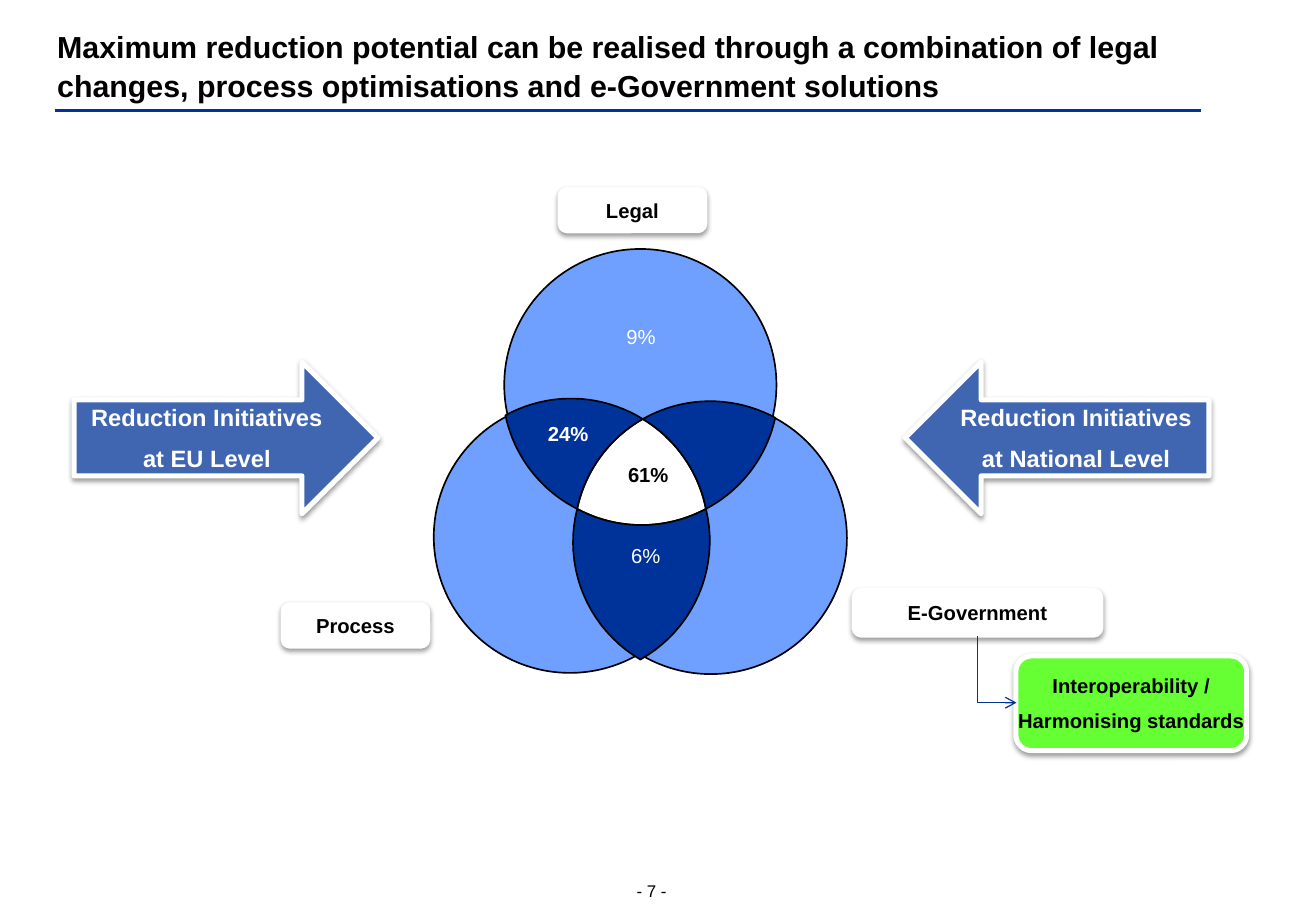
"""Build a slide showing the reduction potential of legal, process and e-Government measures."""
import math

import pptx
import pptx.dml.color
import pptx.enum.shapes
import pptx.enum.text
import pptx.oxml
import pptx.oxml.ns
import pptx.util

Inches = pptx.util.Inches
Pt = pptx.util.Pt
RGBColor = pptx.dml.color.RGBColor
Preset = pptx.enum.shapes.MSO_SHAPE
Connector = pptx.enum.shapes.MSO_CONNECTOR
Anchor = pptx.enum.text.MSO_ANCHOR
Align = pptx.enum.text.PP_ALIGN

BLACK = RGBColor(0x00, 0x00, 0x00)
WHITE = RGBColor(0xFF, 0xFF, 0xFF)
NAVY = RGBColor(0x00, 0x33, 0x99)
LINK_BLUE = RGBColor(0x00, 0x32, 0x96)
ARROW_BLUE = RGBColor(0x40, 0x66, 0xB2)
CIRCLE_BLUE = RGBColor(0x70, 0xA0, 0xFF)
GREEN = RGBColor(0x66, 0xFF, 0x33)

TITLE = ("Maximum reduction potential can be realised through a combination of legal "
         "changes, process optimisations and e-Government solutions")
PAGE_NUMBER = "- 7 -"

CARDS = [
    (["E-Government"], Preset.ROUNDED_RECTANGLE, (7.03, 4.86, 2.03, 0.37), WHITE, BLACK, 12),
    (["Legal"], Preset.ROUNDED_RECTANGLE, (4.61, 1.56, 1.19, 0.34), WHITE, BLACK, 12),
    (["Process"], Preset.ROUNDED_RECTANGLE, (2.33, 4.98, 1.19, 0.34), WHITE, BLACK, 12),
    (["Reduction Initiatives", "at EU Level"], Preset.RIGHT_ARROW,
     (0.61, 2.98, 2.5, 1.25), ARROW_BLUE, WHITE, 14),
    (["Reduction Initiatives", "at National Level"], Preset.LEFT_ARROW,
     (7.45, 2.98, 2.5, 1.25), ARROW_BLUE, WHITE, 14),
    (["Interoperability /", "Harmonising standards"], Preset.ROUNDED_RECTANGLE,
     (8.36, 5.4, 1.9, 0.78), GREEN, BLACK, 12),
]

RADIUS = 1.12
CIRCLE_CENTRES = [(5.27, 3.17), (4.69, 4.42), (5.85, 4.43)]
APEX, CORE_LEFT, CORE_RIGHT = (5.29, 3.45), (4.75, 4.19), (5.81, 4.19)
TIP_LEFT, TIP_RIGHT, TIP_BOTTOM = (4.16, 3.42), (6.38, 3.44), (5.27, 5.43)
CORE = [APEX, CORE_RIGHT, CORE_LEFT]
OVERLAPS = [
    (CORE, WHITE),
    ([TIP_LEFT, APEX, CORE_LEFT], NAVY),
    ([APEX, TIP_RIGHT, CORE_RIGHT], NAVY),
    ([CORE_LEFT, CORE_RIGHT, TIP_BOTTOM], NAVY),
]
ARC_STEPS = 20

SHARES = [
    ("9%", (4.99, 2.62, 0.57, 0.4), WHITE, False),
    ("24%", (4.32, 3.42, 0.71, 0.4), WHITE, True),
    ("61%", (4.98, 3.76, 0.71, 0.4), BLACK, True),
    ("6%", (5.03, 4.42, 0.57, 0.4), WHITE, False),
]


def apply(target, settings):
    for name, value in settings.items():
        setattr(target, name, value)


def write(shape, lines, size, color, bold=False, align=Align.CENTER, inset=None,
          anchor=Anchor.TOP, wrap=False, spacing=None):
    frame = shape.text_frame
    apply(frame, {"word_wrap": wrap, "vertical_anchor": anchor})
    if inset is not None:
        sides = ("margin_left", "margin_top", "margin_right", "margin_bottom")
        apply(frame, {side: Inches(inset) for side in sides})
    for index, line in enumerate(lines):
        para = frame.add_paragraph() if index else frame.paragraphs[0]
        para.alignment = align
        if index:
            para.space_before = Pt(size * 0.53)
        if spacing:
            para.line_spacing = spacing
        span = para.add_run()
        span.text = line
        apply(span.font, {"name": "Arial", "size": Pt(size), "bold": bold})
        span.font.color.rgb = color


def paint(shape, fill, line, width):
    shape.shadow.inherit = False
    shape.fill.solid()
    shape.fill.fore_color.rgb = fill
    shape.line.color.rgb = line
    shape.line.width = Pt(width)


def add_shadow(shape):
    effects = shape.element.spPr.find(pptx.oxml.ns.qn("a:effectLst"))
    effects.append(pptx.oxml.parse_xml(
        f'<a:outerShdw {pptx.oxml.ns.nsdecls("a")} blurRad="{Pt(3.1)}" dist="{Pt(1.6)}" '
        'dir="5400000" rotWithShape="0"><a:srgbClr val="000000">'
        '<a:alpha val="38000"/></a:srgbClr></a:outerShdw>'))


def add_line(page, kind, ends, color, width):
    line = page.shapes.add_connector(kind, *map(Inches, ends))
    line.line.color.rgb = color
    line.line.width = Pt(width)
    line.element.spPr.append(
        pptx.oxml.parse_xml(f'<a:effectLst {pptx.oxml.ns.nsdecls("a")}/>'))
    return line


def arc(start, end, side):
    run, rise = end[0] - start[0], end[1] - start[1]
    chord = math.hypot(run, rise)
    depth = side * math.sqrt(RADIUS ** 2 - chord ** 2 / 4) / chord
    center_x = (start[0] + end[0]) / 2 - rise * depth
    center_y = (start[1] + end[1]) / 2 + run * depth
    first = math.atan2(start[1] - center_y, start[0] - center_x)
    sweep = side * 2 * math.asin(chord / 2 / RADIUS)
    angles = [first + sweep * step / ARC_STEPS for step in range(ARC_STEPS + 1)]
    return [(Inches(center_x + RADIUS * math.cos(angle)),
             Inches(center_y + RADIUS * math.sin(angle))) for angle in angles]


def edges(corners):
    return list(zip(corners, corners[1:] + corners[:1]))


def add_venn(page):
    for x, y in CIRCLE_CENTRES:
        bounds = (x - RADIUS, y - RADIUS, 2 * RADIUS, 2 * RADIUS)
        circle = page.shapes.add_shape(Preset.OVAL, *map(Inches, bounds))
        paint(circle, CIRCLE_BLUE, BLACK, 1)
    for corners, fill in OVERLAPS:
        points = []
        for start, end in edges(corners):
            points += arc(start, end, -1 if (end, start) in edges(CORE) else 1)
        builder = page.shapes.build_freeform(*points[0])
        builder.add_line_segments(points[1:], close=True)
        paint(builder.convert_to_shape(), fill, BLACK, 1)


def add_link(page):
    link = add_line(page, Connector.ELBOW, (7.93, 5.35, 8.48, 5.67), LINK_BLUE, 0.75)
    properties = link.element.spPr
    properties.find(pptx.oxml.ns.qn("a:prstGeom")).set("prst", "bentConnector2")
    transform = properties.find(pptx.oxml.ns.qn("a:xfrm"))
    transform.set("rot", str(270 * 60000))
    transform.set("flipH", "1")
    properties.find(pptx.oxml.ns.qn("a:ln")).append(
        pptx.oxml.parse_xml(f'<a:tailEnd {pptx.oxml.ns.nsdecls("a")} type="arrow"/>'))


def add_text(page, bounds, lines, size, color, **options):
    write(page.shapes.add_textbox(*map(Inches, bounds)), lines, size, color, **options)


def main():
    deck = pptx.Presentation()
    apply(deck, {"slide_width": Inches(10.83), "slide_height": Inches(7.5)})
    page = deck.slides.add_slide(deck.slide_layouts[6])

    add_line(page, Connector.STRAIGHT, (0.45, 0.91, 9.88, 0.91), NAVY, 1.5)
    add_text(page, (0.47, 0.23, 9.91, 0.62), [TITLE], 18, BLACK, bold=True, align=Align.LEFT,
             inset=0, anchor=Anchor.BOTTOM, wrap=True, spacing=1.06)
    add_text(page, (5.24, 7.25, 0.34, 0.17), [PAGE_NUMBER], 10, BLACK,
             align=Align.LEFT, inset=0)
    add_venn(page)
    for lines, preset, bounds, fill, color, size in CARDS:
        card = page.shapes.add_shape(preset, *map(Inches, bounds))
        paint(card, fill, WHITE, 3)
        add_shadow(card)
        write(card, lines, size, color, bold=True, inset=0.04, anchor=Anchor.MIDDLE)
    for share, bounds, color, bold in SHARES:
        add_text(page, bounds, [share], 12, color, bold=bold)
    add_link(page)
    deck.save("out.pptx")


if __name__ == "__main__":
    main()
